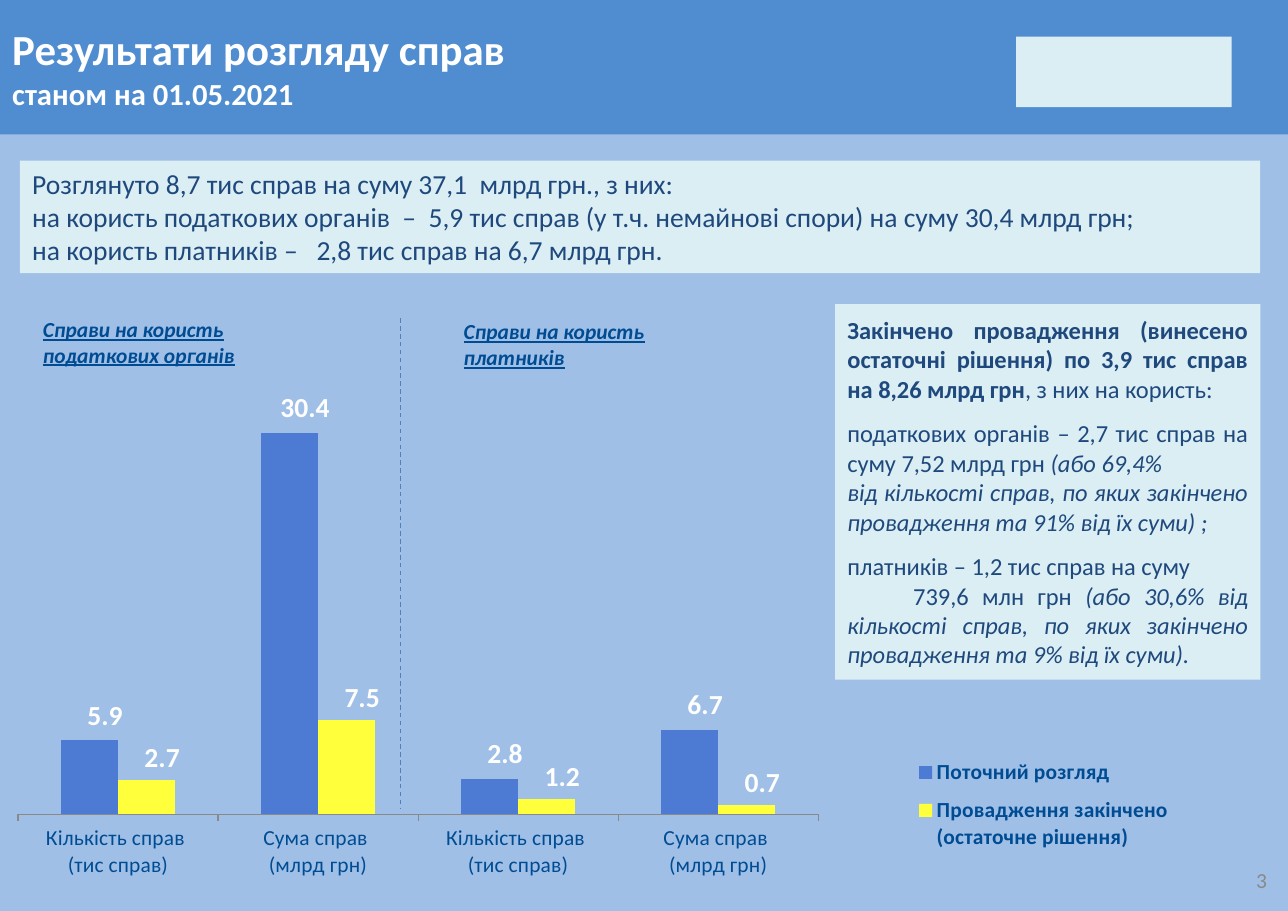
import pptx
import pptx.chart.data
import pptx.dml.color
import pptx.enum.chart
import pptx.enum.dml
import pptx.enum.shapes
import pptx.enum.text
import pptx.oxml
import pptx.oxml.ns
import pptx.util
from lxml import etree

Pt = pptx.util.Pt
ALIGN = pptx.enum.text.PP_ALIGN
ANCHOR = pptx.enum.text.MSO_ANCHOR
RECT = pptx.enum.shapes.MSO_SHAPE.RECTANGLE
COLORS = {
    "back": "9FBFE7", "band": "508DD0", "panel": "DBEEF4", "white": "FFFFFF",
    "text": "1F497D", "label": "004C92", "gray": "898989", "rule": "4F81BD",
    "blue": "4D7AD3", "yellow": "FFFF3B",
}
BODY = {"size": 16, "color": "text"}
BOLD = BODY | {"bold": True}
ITALIC = BODY | {"italic": True}
HEAD = {"size": 14, "color": "label", "bold": True, "italic": True,
        "underline": True}
VALUE = {"size": 18, "color": "white", "bold": True}


def rgb(key):
    return pptx.dml.color.RGBColor.from_string(COLORS[key])


def paint(item, key):
    item.fill.solid()
    item.fill.fore_color.rgb = rgb(key)


def style(font, form):
    """Apply a dict of format values to a font."""
    for key, val in ({"name": "Calibri"} | form).items():
        if key == "color":
            font.color.rgb = rgb(val)
        else:
            setattr(font, key, Pt(val) if key == "size" else val)


def write(shape, paras, align=ALIGN.LEFT, anchor=ANCHOR.TOP, pad=(7.2, 3.6)):
    """Fill a shape; each paragraph is (runs, space before, indent)."""
    frame = shape.text_frame
    frame.word_wrap = True
    frame.auto_size = pptx.enum.text.MSO_AUTO_SIZE.NONE
    frame.vertical_anchor = anchor
    frame.margin_left = frame.margin_right = Pt(pad[0])
    frame.margin_top = frame.margin_bottom = Pt(pad[1])
    for i, (runs, before, indent) in enumerate(paras):
        para = frame.paragraphs[0] if i == 0 else frame.add_paragraph()
        para.alignment = align
        para.space_before = Pt(before)
        props = para._p.get_or_add_pPr()
        props.set("marL", "0")
        props.set("indent", str(Pt(indent)))
        for text, form in runs:
            for j, part in enumerate(text.split("\n")):
                if j:
                    para.add_line_break()
                if part:
                    run = para.add_run()
                    run.text = part
                    style(run.font, form)


def line(text, form, before=0):
    return [(text, form)], before, 0


def add_box(slide, area, key):
    box = slide.shapes.add_shape(RECT, *map(Pt, area))
    box.shadow.inherit = False
    box.line.fill.background()
    paint(box, key)
    return box


def add_panel(slide, area, paras, **opts):
    write(add_box(slide, area, "panel"), paras, anchor=ANCHOR.MIDDLE,
          pad=(8, 4), **opts)


def add_note(slide, area, paras, **opts):
    write(slide.shapes.add_textbox(*map(Pt, area)), paras, **opts)


def add_title(slide):
    title = slide.shapes.title
    title.left, title.top, title.width, title.height = map(
        Pt, (0, 0, 841.7, 87.8))
    paint(title, "band")
    form = {"color": "white", "bold": True}
    runs = [("Результати розгляду справ\n", form | {"size": 28}),
            ("станом на 01.05.2021", form | {"size": 20})]
    write(title, [(runs, 0, 0)], anchor=ANCHOR.MIDDLE, pad=(8, 4))


def set_layout(node, index, **vals):
    """Put a manual chart layout into a node at the given child index."""
    tag = pptx.oxml.ns.qn
    for old in node.findall(tag("c:layout")):
        node.remove(old)
    layout = etree.Element(tag("c:layout"))
    manual = etree.SubElement(layout, tag("c:manualLayout"))
    for key, val in vals.items():
        etree.SubElement(manual, tag("c:" + key)).set("val", str(val))
    node.insert(index, layout)


def add_chart(slide):
    data = pptx.chart.data.CategoryChartData(number_format="#,##0.0")
    data.categories = ["Кількість справ \n(тис справ)",
                       "Сума справ \n(млрд грн)"] * 2
    data.add_series("Поточний розгляд", (5.9, 30.4, 2.8, 6.7))
    data.add_series("Провадження закінчено (остаточне рішення)",
                    (2.7, 7.5, 1.2, 0.7))
    chart = slide.shapes.add_chart(
        pptx.enum.chart.XL_CHART_TYPE.COLUMN_CLUSTERED,
        *map(Pt, (0, 170, 784, 412)), data).chart
    style(chart.font, {"size": 18})
    chart.has_title = False
    chart.has_legend = True
    legend = chart.legend
    legend.position = pptx.enum.chart.XL_LEGEND_POSITION.RIGHT
    legend.include_in_layout = False
    style(legend.font, {"size": 14, "color": "label", "bold": True})
    edge = {"xMode": "edge", "yMode": "edge"}
    set_layout(legend._element, 1, **edge, x=0.75, y=0.774, w=0.24, h=0.18)
    set_layout(chart._chartSpace.chart.plotArea, 0, layoutTarget="inner",
               **edge, x=0.015, y=0.182, w=0.667, h=0.697)

    axis = chart.value_axis
    axis.visible = axis.has_major_gridlines = False
    axis.minimum_scale, axis.maximum_scale = 0, 35
    cats = chart.category_axis
    cats.format.line.color.rgb = rgb("gray")
    cats.format.line.width = Pt(0.75)
    style(cats.tick_labels.font, {"size": 14, "color": "label"})

    plot = chart.plots[0]
    plot.gap_width, plot.overlap = 150, 0
    plot.vary_by_categories = False
    for series, key, lift in zip(plot.series, ("blue", "yellow"),
                                 (-0.006, -0.002)):
        paint(series.format, key)
        for i in range(len(data.categories)):
            label = series.points[i].data_label
            style(label.font, VALUE)
            label.position = pptx.enum.chart.XL_LABEL_POSITION.OUTSIDE_END
            set_layout(label._get_or_add_dLbl(), 1, x=0.013, y=lift)


def add_rule(slide):
    rule = slide.shapes.add_connector(
        pptx.enum.shapes.MSO_CONNECTOR.STRAIGHT,
        *map(Pt, (262, 208, 262, 529)))
    rule.line.color.rgb = rgb("rule")
    rule.line.width = Pt(0.75)
    rule.line.dash_style = pptx.enum.dml.MSO_LINE.DASH
    etree.SubElement(rule._element.spPr, pptx.oxml.ns.qn("a:effectLst"))


def main():
    deck = pptx.Presentation()
    deck.slide_width, deck.slide_height = Pt(841.7), Pt(595.4)
    slide = deck.slides.add_slide(deck.slide_layouts[5])
    paint(slide.background, "back")
    add_title(slide)
    add_chart(slide)
    add_note(slide, (813, 559, 21.6, 31.7),
             [line("3", {"size": 14, "color": "gray"})],
             align=ALIGN.RIGHT, anchor=ANCHOR.MIDDLE, pad=(8, 4))

    total = (
        "Розглянуто 8,7 тис справ на суму 37,1  млрд грн., з них:",
        "на користь податкових органів  –  5,9 тис справ "
        "(у т.ч. немайнові спори) на суму 30,4 млрд грн;",
        "на користь платників –   2,8 тис справ на 6,7 млрд грн.")
    add_panel(slide, (13, 105, 810.5, 73.5),
              [line(text, BODY | {"size": 18}) for text in total])
    closed = [
        ([("Закінчено провадження (винесено остаточні рішення) по 3,9 тис "
           "справ на 8,26 млрд грн", BOLD),
          (", з них на користь:", BODY)], 0, 0),
        ([("податкових органів – 2,7 тис справ на суму 7,52 млрд грн ", BODY),
          ("(або 69,4%", ITALIC)], 10, 0),
        line("від кількості справ, по яких закінчено провадження "
             "та 91% від їх суми) ;", ITALIC),
        line("платників – 1,2 тис справ на суму", BODY, 10),
        ([("739,6 млн грн ", BODY),
          ("(або 30,6% від кількості справ, по яких закінчено провадження "
           "та 9% від їх суми).", ITALIC)], 0, 43),
    ]
    add_panel(slide, (545.8, 198.7, 277.9, 245.5), closed,
              align=ALIGN.JUSTIFY)

    add_rule(slide)
    add_note(slide, (21, 203, 190, 45),
             [line("Справи на користь податкових органів", HEAD)])
    add_note(slide, (296, 204.5, 152, 42.5),
             [line("Справи на користь платників", HEAD)])
    add_box(slide, (664, 24, 141, 46), "panel")
    deck.save("out.pptx")


if __name__ == "__main__":
    main()
